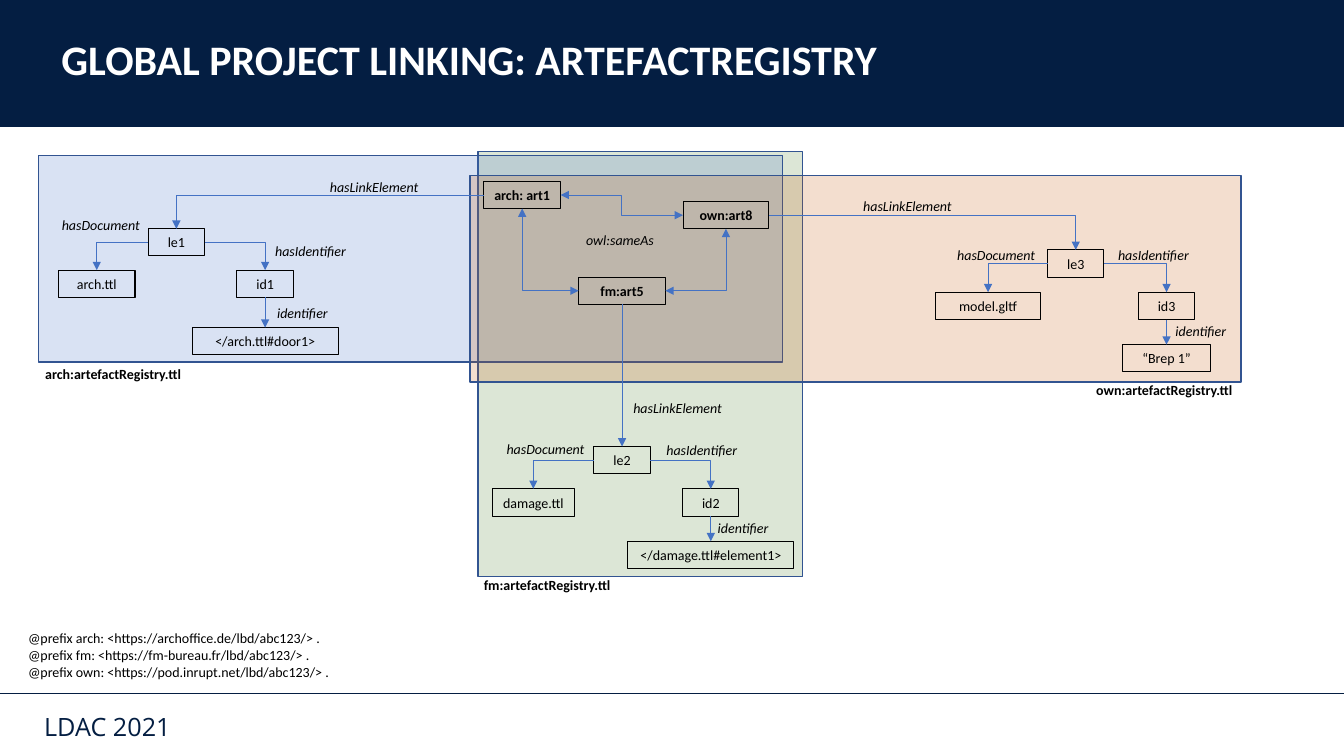
from pptx import Presentation
from pptx.dml.color import RGBColor
from pptx.enum.shapes import MSO_CONNECTOR, MSO_SHAPE
from pptx.enum.text import MSO_ANCHOR, PP_ALIGN
from pptx.oxml.ns import qn
from pptx.util import Inches, Pt
from lxml.etree import SubElement


class Theme:
    navy = RGBColor(0x04, 0x1E, 0x42)
    white = RGBColor(0xFF, 0xFF, 0xFF)
    black = RGBColor(0, 0, 0)
    edge = RGBColor(0x32, 0x54, 0x91)
    arrow = RGBColor(0x44, 0x72, 0xC4)
    green = RGBColor(0x54, 0x82, 0x35)
    rust = RGBColor(0xC5, 0x5A, 0x11)
    font = "Calibri"
    brand = "Open Sans"
    head = Pt(30)
    foot = Pt(18)
    text = Pt(10)


def write(shape, lines, size=Theme.text, color=Theme.black, font=Theme.font,
          bold=False, italic=False, align=PP_ALIGN.LEFT, space=1.0,
          anchor=MSO_ANCHOR.TOP, wrap=True):
    frame = shape.text_frame
    frame.word_wrap = wrap
    frame.vertical_anchor = anchor
    for i, line in enumerate(lines):
        para = frame.add_paragraph() if i else frame.paragraphs[0]
        para.alignment = align
        para.line_spacing = space
        run = para.add_run()
        run.text = line
        run.font.name = font
        run.font.size = size
        run.font.bold = bold
        run.font.italic = italic
        run.font.color.rgb = color


def rule(line, color, width, ends=()):
    line.line.color.rgb = color
    line.line.width = Pt(width)
    for end in ends:
        SubElement(line.line._get_or_add_ln(), qn("a:" + end), type="triangle")
    SubElement(line._element.spPr, qn("a:effectLst"))


deck = Presentation()
deck.slide_width = Inches(13.33)
deck.slide_height = Inches(7.5)
slide = deck.slides.add_slide(deck.slide_layouts[5])
shapes = slide.shapes

band = shapes.add_shape(MSO_SHAPE.RECTANGLE, 0, 0, deck.slide_width, Inches(1.26))
band.shadow.inherit = False
band.fill.solid()
band.fill.fore_color.rgb = Theme.navy
band.line.fill.background()

title = shapes.title
title.left, title.top = Inches(0.51), Inches(0)
title.width, title.height = Inches(11.49), Inches(1.23)
write(title, ["GLOBAL PROJECT LINKING: ARTEFACTREGISTRY"], Theme.head, Theme.white,
      bold=True, space=0.9, anchor=MSO_ANCHOR.MIDDLE)
shapes._spTree.append(title._element)

base = shapes.add_connector(MSO_CONNECTOR.STRAIGHT, 0, Inches(6.88),
                            deck.slide_width, Inches(6.88))
rule(base, Theme.navy, 1)
foot = shapes.add_textbox(Inches(0.34), Inches(6.92), Inches(3.3), Inches(0.62))
write(foot, ["LDAC 2021"], Theme.foot, Theme.navy, Theme.brand, space=0.9,
      anchor=MSO_ANCHOR.MIDDLE)

panels = [
    (4.74, 1.5, 3.22, 4.22, Theme.green),
    (0.38, 1.54, 7.38, 2.05, Theme.arrow),
    (4.66, 1.74, 7.65, 2.05, Theme.rust),
]
for x, y, w, h, color in panels:
    panel = shapes.add_shape(MSO_SHAPE.RECTANGLE, Inches(x), Inches(y), Inches(w), Inches(h))
    panel.shadow.inherit = False
    panel.fill.solid()
    panel.fill.fore_color.rgb = color
    tint = panel._element.spPr.find(".//" + qn("a:srgbClr"))
    SubElement(tint, qn("a:alpha"), val="20000")
    panel.line.color.rgb = Theme.edge
    panel.line.width = Pt(1)

nodes = [
    ("arch: art1", 5.18, 1.8, 0.76, True),
    ("own:art8", 7.2, 2, 0.85, True),
    ("fm:art5", 6.17, 2.75, 0.86, True),
    ("le1", 1.75, 2.27, 0.56, False),
    ("arch.ttl", 0.96, 2.68, 0.76, False),
    ("id1", 2.63, 2.68, 0.56, False),
    ("</arch.ttl#door1>", 2.63, 3.25, 1.45, False),
    ("le2", 6.17, 4.43, 0.56, False),
    ("damage.ttl", 5.29, 4.85, 0.82, False),
    ("id2", 7.05, 4.85, 0.56, False),
    ("</damage.ttl#element1>", 7.05, 5.37, 1.65, False),
    ("le3", 10.67, 2.48, 0.56, False),
    ("model.gltf", 9.8, 2.9, 1.04, False),
    ("id3", 11.57, 2.9, 0.56, False),
    ("“Brep 1”", 11.57, 3.42, 0.87, False),
]
boxes = {}
for name, mid, y, w, bold in nodes:
    box = shapes.add_shape(MSO_SHAPE.RECTANGLE, Inches(mid - w / 2), Inches(y),
                           Inches(w), Inches(0.27))
    box.shadow.inherit = False
    box.fill.background()
    box.line.color.rgb = Theme.black
    box.line.width = Pt(0.75)
    write(box, [name], bold=bold, align=PP_ALIGN.CENTER,
          anchor=MSO_ANCHOR.MIDDLE, wrap=False)
    boxes[name] = box

TOP, LEFT, BASE, RIGHT = range(4)
ONE, BOTH = ["tailEnd"], ["headEnd", "tailEnd"]
links = [
    ("arch: art1", LEFT, "le1", TOP, "bentConnector2", ONE),
    ("own:art8", RIGHT, "le3", TOP, "bentConnector2", ONE),
    ("fm:art5", BASE, "le2", TOP, "line", ONE),
    ("fm:art5", LEFT, "arch: art1", BASE, "bentConnector2", BOTH),
    ("fm:art5", RIGHT, "own:art8", BASE, "bentConnector2", BOTH),
    ("arch: art1", RIGHT, "own:art8", LEFT, "bentConnector3", BOTH),
]
trees = [
    ("le1", "arch.ttl", "id1", "</arch.ttl#door1>"),
    ("le2", "damage.ttl", "id2", "</damage.ttl#element1>"),
    ("le3", "model.gltf", "id3", "“Brep 1”"),
]
for root, doc, key, value in trees:
    links += [
        (root, LEFT, doc, TOP, "bentConnector2", ONE),
        (root, RIGHT, key, TOP, "bentConnector2", ONE),
        (key, BASE, value, TOP, "line", ONE),
    ]
for start, out, stop, into, kind, ends in links:
    link = shapes.add_connector(MSO_CONNECTOR.ELBOW, 0, 0, 0, 0)
    link.begin_connect(boxes[start], out)
    link.end_connect(boxes[stop], into)
    link._element.spPr.find(qn("a:prstGeom")).set("prst", kind)
    rule(link, Theme.arrow, 0.5, ends)

labels = [
    ("hasLinkElement", 3.09, 1.72), ("hasDocument", 0.38, 2.1),
    ("hasIdentifier", 2.46, 2.36), ("identifier", 2.38, 2.97),
    ("hasLinkElement", 6.1, 3.91), ("hasDocument", 4.79, 4.32),
    ("hasIdentifier", 6.34, 4.33), ("identifier", 6.75, 5.1),
    ("hasLinkElement", 8.38, 1.91), ("hasDocument", 9.26, 2.4),
    ("hasIdentifier", 10.82, 2.4), ("identifier", 11.29, 3.15),
    ("owl:sameAs", 5.53, 2.25),
]
for text, x, y in labels:
    label = shapes.add_textbox(Inches(x), Inches(y), Inches(1.24), Inches(0.27))
    write(label, [text], italic=True, align=PP_ALIGN.CENTER)

names = [
    ("fm", 4.7, 5.64, PP_ALIGN.LEFT),
    ("own", 9.03, 3.7, PP_ALIGN.RIGHT),
    ("arch", 0.35, 3.54, PP_ALIGN.LEFT),
]
for name, x, y, align in names:
    tag = shapes.add_textbox(Inches(x), Inches(y), Inches(3.29), Inches(0.29))
    write(tag, [name + ":artefactRegistry.ttl"], bold=True, align=align, space=1.2)

notes = shapes.add_textbox(Inches(0.18), Inches(6.2), Inches(3.44), Inches(0.61))
write(notes, [
    "@prefix arch: <https://archoffice.de/lbd/abc123/> .",
    "@prefix fm: <https://fm-bureau.fr/lbd/abc123/> .",
    "@prefix own: <https://pod.inrupt.net/lbd/abc123/> .",
])

deck.save("out.pptx")
